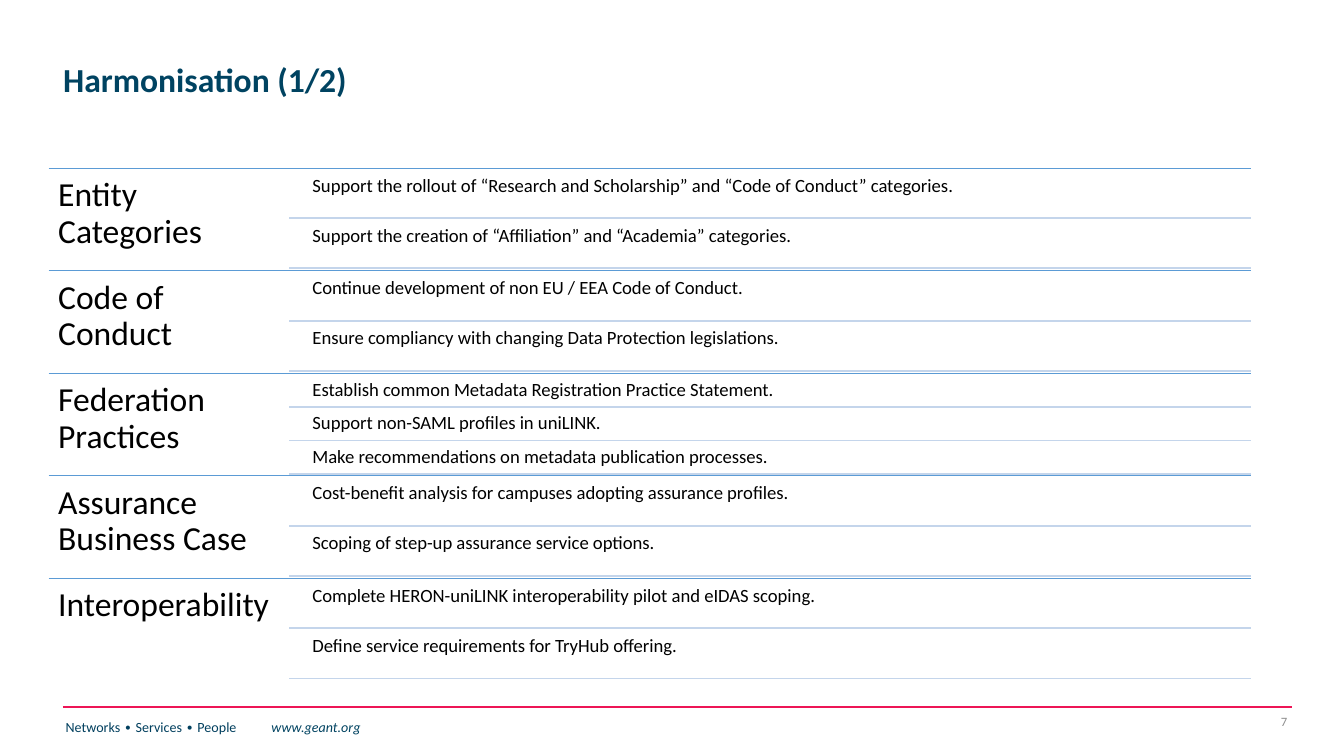
from dataclasses import dataclass

from lxml import etree
from pptx import Presentation
from pptx.dml.color import RGBColor
from pptx.enum import shapes, text
from pptx.oxml import ns
from pptx.util import Cm, Pt


@dataclass(frozen=True)
class Theme:
    font: str = "Calibri"
    heading: str = "004361"
    footer: str = "003F5E"
    body: str = "000000"
    page: str = "8C8C8C"
    accent: str = "ED1556"
    topic_rule: str = "5B9BD5"
    action_rule: str = "C4D5EB"
    large: float = 18
    medium: float = 10
    small: float = 7.5
    tiny: float = 6.8


THEME = Theme()

TOPICS = [
    ("Entity Categories", [
        "Support the rollout of “Research and Scholarship” and “Code of Conduct” categories.",
        "Support the creation of “Affiliation” and “Academia” categories.",
    ]),
    ("Code of Conduct", [
        "Continue development of non EU / EEA Code of Conduct.",
        "Ensure compliancy with changing Data Protection legislations.",
    ]),
    ("Federation Practices", [
        "Establish common Metadata Registration Practice Statement.",
        "Support non-SAML profiles in uniLINK.",
        "Make recommendations on metadata publication processes.",
    ]),
    ("Assurance Business Case", [
        "Cost-benefit analysis for campuses adopting assurance profiles.",
        "Scoping of step-up assurance service options.",
    ]),
    ("Interoperability", [
        "Complete HERON-uniLINK interoperability pilot and eIDAS scoping.",
        "Define service requirements for TryHub offering.",
    ]),
]


def style(paragraph, size, color, bold=False):
    font = paragraph.font
    font.name = THEME.font
    font.size = Pt(size)
    font.bold = bold
    font.color.rgb = RGBColor.from_string(color)


def add_rule(slide, left, right, y, color, width):
    rule = slide.shapes.add_connector(
        shapes.MSO_CONNECTOR.STRAIGHT, Cm(left), Cm(y), Cm(right), Cm(y))
    rule.line.color.rgb = RGBColor.from_string(color)
    rule.line.width = Pt(width)
    etree.SubElement(rule._element.spPr, ns.qn("a:effectLst"))


def add_label(slide, box, wording, size, color, inset=None):
    frame = slide.shapes.add_textbox(*map(Cm, box)).text_frame
    frame.word_wrap = True
    if inset is not None:
        frame.margin_left = frame.margin_right = Cm(inset)
        frame.margin_top = frame.margin_bottom = Cm(inset)
    paragraph = frame.paragraphs[0]
    paragraph.text = wording
    style(paragraph, size, color)
    return frame


def fill_title(slide, box, wording):
    title = slide.shapes.title
    title.left, title.top, title.width, title.height = map(Cm, box)
    frame = title.text_frame
    frame.word_wrap = True
    frame.vertical_anchor = text.MSO_ANCHOR.MIDDLE
    heading = frame.paragraphs[0]
    heading.text = wording
    heading.alignment = text.PP_ALIGN.LEFT
    heading.line_spacing = 0.9
    style(heading, THEME.large, THEME.heading, bold=True)


def add_topic(slide, box, topic, actions):
    left, top, width, height = box
    right = left + width
    topic_width = width / 5
    action_left = left + topic_width
    indent = 0.34
    gap_ratio = 0.05
    count = len(actions)
    action_height = height / (count + gap_ratio * (count + 1))
    pitch = action_height * (1 + gap_ratio)

    add_rule(slide, left, right, top, THEME.topic_rule, 0.5)
    topic_frame = add_label(slide, (left, top, topic_width, height),
                            topic, THEME.large, THEME.body, 0.18)
    topic_frame.paragraphs[0].line_spacing = 0.9
    for index, action in enumerate(actions):
        action_top = top + gap_ratio * action_height + index * pitch
        action_box = (action_left + indent, action_top,
                      right - action_left - indent, action_height)
        action_frame = add_label(slide, action_box, action,
                                 THEME.medium, THEME.body, 0.1)
        action_frame.paragraphs[0].line_spacing = 0.9
        add_rule(slide, action_left, right, action_top + action_height,
                 THEME.action_rule, 1)


def add_topics(slide, box, topics):
    left, top, width, height = box
    row_height = height / len(topics)
    for index, (topic, actions) in enumerate(topics):
        add_topic(slide, (left, top + index * row_height, width, row_height),
                  topic, actions)


def add_footer(slide, box):
    left, top, width, height = box
    add_rule(slide, left, left + width, top, THEME.accent, 1)

    motto_box = (left - 0.2, top + 0.1, 8.66, height - 0.1)
    motto_frame = add_label(slide, motto_box, "Networks ∙ Services ∙ People\t",
                            THEME.small, THEME.footer)
    motto = motto_frame.paragraphs[0]
    tabs = etree.Element(ns.qn("a:tabLst"))
    etree.SubElement(tabs, ns.qn("a:tab"), pos=str(Cm(3.89)), algn="l")
    motto._p.get_or_add_pPr().insert(0, tabs)
    address = motto.add_run()
    address.text = "www.geant.org"
    address.font.italic = True
    address.font.color.rgb = RGBColor.from_string(THEME.heading)

    page_width = 1.55
    page_box = (left + width + 0.17 - page_width, top - 0.02, page_width, 0.58)
    page_frame = add_label(slide, page_box, "7", THEME.tiny, THEME.page)
    page_frame.vertical_anchor = text.MSO_ANCHOR.MIDDLE
    page_frame.paragraphs[0].alignment = text.PP_ALIGN.RIGHT


def main():
    deck = Presentation()
    deck.slide_width, deck.slide_height = Cm(25.4), Cm(14.29)
    slide = deck.slides.add_slide(deck.slide_layouts[5])
    fill_title(slide, (0.94, 0.15, 20.02, 2.77), "Harmonisation (1/2)")
    add_topics(slide, (0.92, 3.18, 22.73, 9.69), TOPICS)
    add_footer(slide, (1.19, 13.36, 23.22, 0.93))
    deck.save("out.pptx")


if __name__ == "__main__":
    main()
